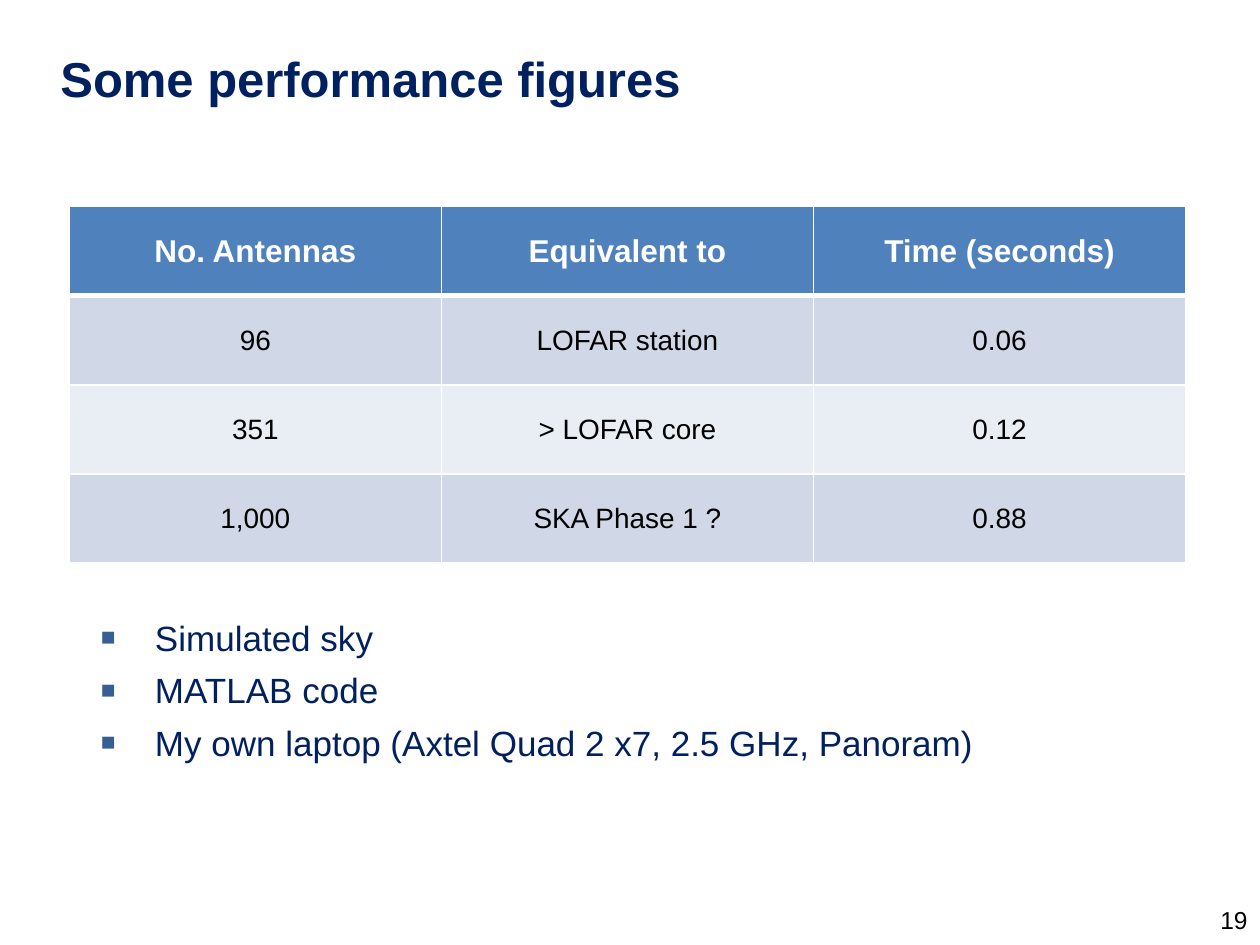
from lxml import etree
from pptx import Presentation
from pptx.dml.color import RGBColor
from pptx.enum.text import MSO_ANCHOR, PP_ALIGN
from pptx.oxml.ns import qn
from pptx.util import Emu, Inches, Pt

LEFT, CENTER, RIGHT = PP_ALIGN.LEFT, PP_ALIGN.CENTER, PP_ALIGN.RIGHT
TOP, MIDDLE = MSO_ANCHOR.TOP, MSO_ANCHOR.MIDDLE
COLORS = {"navy": "002060", "bullet": "376092", "header": "4F81BD",
          "band dark": "D0D8E8", "band light": "E9EDF4",
          "white": "FFFFFF", "black": "000000"}


def format_paragraph(paragraph, size, color, alignment=LEFT, bold=False):
    paragraph.alignment = alignment
    for run in paragraph.runs:
        run.font.name = "Arial"
        run.font.size = Pt(size)
        run.font.bold = bold
        run.font.color.rgb = RGBColor.from_string(COLORS[color])


def add_element(parent, tag, **attributes):
    return etree.SubElement(parent, qn(tag), attributes)


presentation = Presentation()
presentation.slide_width, presentation.slide_height = Inches(10), Inches(7.5)
slide = presentation.slides.add_slide(presentation.slide_layouts[1])
title, body = slide.placeholders

# Title
title.left, title.top = Inches(0.38), Inches(0.23)
title.width, title.height = Inches(9), Inches(0.78)
title.text_frame.text = "Some performance figures"
title.text_frame.vertical_anchor = MIDDLE
format_paragraph(title.text_frame.paragraphs[0], 28, "navy", bold=True)

# Performance table
rows = [
    ("No. Antennas", "Equivalent to", "Time (seconds)"),
    ("96", "LOFAR station", "0.06"),
    ("351", "> LOFAR core", "0.12"),
    ("1,000", "SKA Phase 1 ?", "0.88"),
]
table = slide.shapes.add_table(len(rows), len(rows[0]), Inches(0.55), Inches(1.64),
                               Inches(8.86), Inches(2.83)).table
for row_index, row in enumerate(rows):
    is_header = row_index == 0
    if is_header:
        fill = "header"
    else:
        fill = "band dark" if row_index % 2 else "band light"
    for column_index, text in enumerate(row):
        cell = table.cell(row_index, column_index)
        cell.text_frame.text = text
        cell.vertical_anchor = MIDDLE
        cell.margin_left = cell.margin_right = Inches(0.11)
        cell.margin_top = cell.margin_bottom = Emu(0)
        format_paragraph(cell.text_frame.paragraphs[0], 18 if is_header else 16,
                         "white" if is_header else "black", CENTER, is_header)
        # White borders, heavier between the header and the first row
        heavy_side = {0: "a:lnB", 1: "a:lnT"}.get(row_index)
        for side in ("a:lnL", "a:lnR", "a:lnT", "a:lnB"):
            width = Pt(3 if side == heavy_side else 1)
            border = add_element(cell._tc.get_or_add_tcPr(), side, w=str(width))
            add_element(add_element(border, "a:solidFill"), "a:srgbClr",
                        val=COLORS["white"])
        cell.fill.solid()
        cell.fill.fore_color.rgb = RGBColor.from_string(COLORS[fill])

# Test conditions
conditions = ["Simulated sky", "MATLAB code",
              "My own laptop (Axtel Quad 2 x7, 2.5 GHz, Panoram)"]
body.left, body.top = Inches(0.7), Inches(4.84)
body.width, body.height = Inches(8.83), Inches(1.4)
body.text_frame.text = "\n".join(conditions)
body.text_frame.vertical_anchor = TOP
for index, paragraph in enumerate(body.text_frame.paragraphs):
    properties = paragraph._p.get_or_add_pPr()
    properties.set("marL", str(Inches(0.43)))
    properties.set("indent", str(-Inches(0.43)))
    add_element(add_element(properties, "a:buClr"), "a:srgbClr", val=COLORS["bullet"])
    add_element(properties, "a:buSzPct", val="70000")
    add_element(properties, "a:buFont", typeface="Arial")
    add_element(properties, "a:buChar", char="■")
    paragraph.space_before = Pt(6 if index else 0)
    format_paragraph(paragraph, 20, "navy")

# Slide number
number = slide.shapes.add_textbox(Inches(7.67), Inches(7.1), Inches(2.33), Inches(0.4))
number.text_frame.word_wrap = True
number.text_frame.vertical_anchor = MIDDLE
number.text_frame.text = "19"
format_paragraph(number.text_frame.paragraphs[0], 14, "black", RIGHT)

presentation.save("out.pptx")
